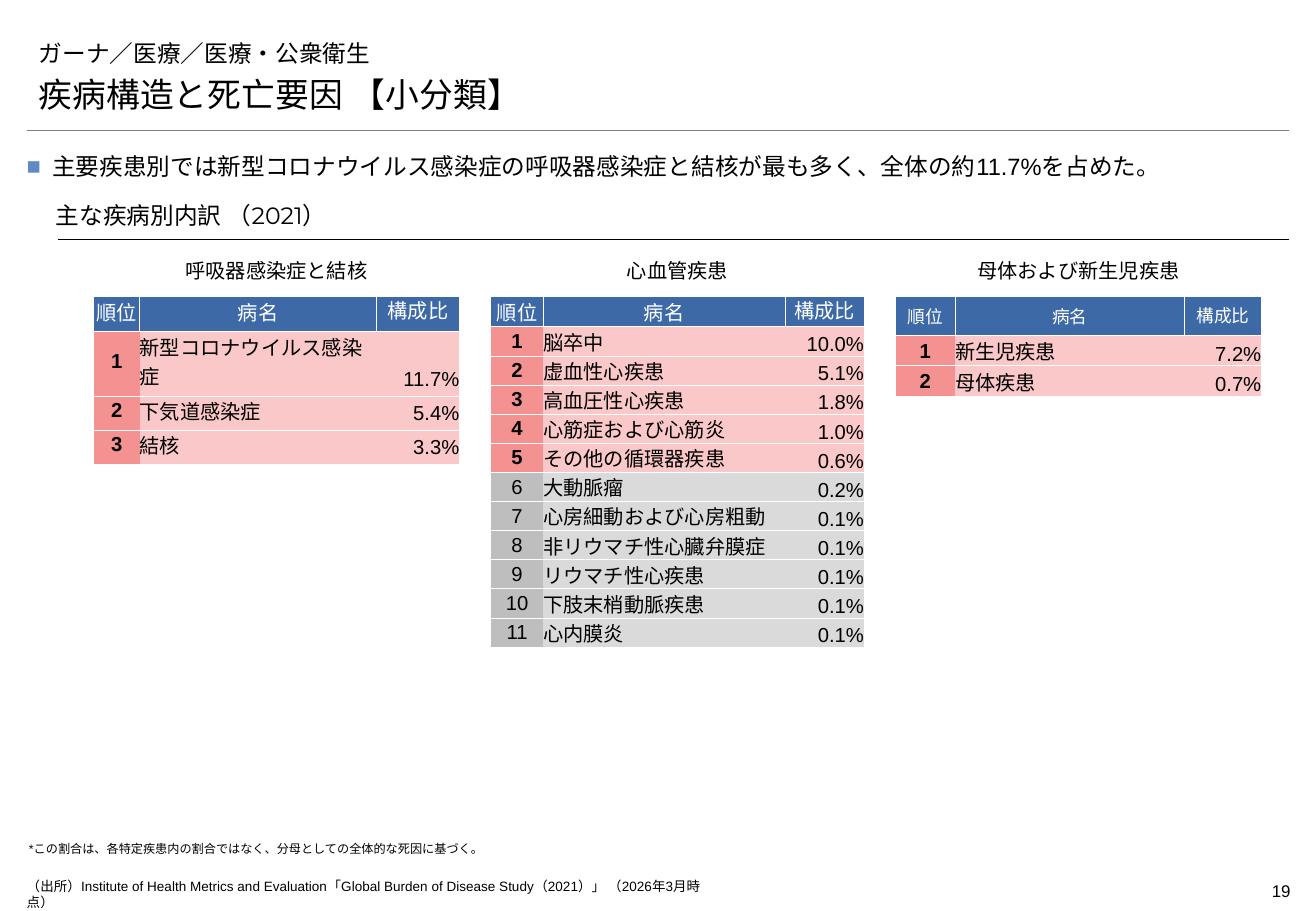
from lxml.etree import SubElement
from pptx import Presentation
from pptx.dml.color import RGBColor
from pptx.enum.text import MSO_ANCHOR, PP_ALIGN
from pptx.oxml.ns import qn
from pptx.util import Inches, Pt

BLACK = RGBColor(0x00, 0x00, 0x00)
WHITE = RGBColor(0xFF, 0xFF, 0xFF)
RULE_GREY = RGBColor(0x7F, 0x7F, 0x7F)
HEADER_BLUE = RGBColor(0x3D, 0x6A, 0xA7)
BULLET_BLUE = RGBColor(0x5F, 0x8A, 0xC3)
RED, PALE_RED = RGBColor(0xF4, 0x92, 0x92), RGBColor(0xFA, 0xC8, 0xC8)
GREY, PALE_GREY = RGBColor(0xBE, 0xBE, 0xBE), RGBColor(0xDA, 0xDA, 0xDA)

JAPANESE, LATIN, HEADING = "Noto Sans CJK JP", "Arial", "Montserrat"

SLIDE_WIDTH, SLIDE_HEIGHT = 10.83, 7.5
LEFT, RIGHT = 0.22, 10.61
CONTENT_WIDTH = RIGHT - LEFT
SECTION_LEFT = 0.46
CAPTION_TOP, TABLE_TOP = 2.14, 2.44
HIGHLIGHTED_RANKS = 5

BREADCRUMB = "ガーナ／医療／医療・公衆衛生"
TITLE = "疾病構造と死亡要因 【小分類】"
SECTION = "主な疾病別内訳 （2021）"
KEY_MESSAGE = [
    ("主要疾患別では新型コロナウイルス感染症の呼吸器感染症と結核が最も多く、全体の約", JAPANESE),
    ("11.7%", LATIN),
    ("を占めた。", JAPANESE),
]
FOOTNOTE = "*この割合は、各特定疾患内の割合ではなく、分母としての全体的な死因に基づく。"
SOURCE = ("（出所）Institute of Health Metrics and Evaluation"
          "「Global Burden of Disease Study（2021）」 （2026年3月時点）")
PAGE_NUMBER = "19"

COLUMN_NAMES = ("順位", "病名", "構成比")
HEADER_FONTS = (JAPANESE, JAPANESE, HEADING)
BODY_FONTS = (LATIN, JAPANESE, LATIN)
BODY_ALIGNMENTS = (PP_ALIGN.CENTER, PP_ALIGN.LEFT, PP_ALIGN.RIGHT)

# Insets are (top, bottom); heights run from the header row down.
DISEASE_TABLES = [
    dict(caption="呼吸器感染症と結核", left=0.77, columns=(0.38, 1.95, 0.68),
         heights=[0.29, 0.53, 0.28, 0.28], header_size=12, header_insets=(0, 0.04),
         body_insets=(0, 0.04), name_anchor=MSO_ANCHOR.MIDDLE,
         diseases=[("新型コロナウイルス感染症", "11.7%"), ("下気道感染症", "5.4%"),
                   ("結核", "3.3%")]),
    dict(caption="心血管疾患", left=4.04, columns=(0.43, 1.99, 0.65),
         heights=[0.25] + [0.24] * 11, header_size=12, header_insets=(0, 0),
         body_insets=(0, 0), name_anchor=MSO_ANCHOR.BOTTOM,
         diseases=[("脳卒中", "10.0%"), ("虚血性心疾患", "5.1%"),
                   ("高血圧性心疾患", "1.8%"), ("心筋症および心筋炎", "1.0%"),
                   ("その他の循環器疾患", "0.6%"), ("大動脈瘤", "0.2%"),
                   ("心房細動および心房粗動", "0.1%"),
                   ("非リウマチ性心臓弁膜症", "0.1%"), ("リウマチ性心疾患", "0.1%"),
                   ("下肢末梢動脈疾患", "0.1%"), ("心内膜炎", "0.1%")]),
    dict(caption="母体および新生児疾患", left=7.37, columns=(0.49, 1.89, 0.63),
         heights=[0.32, 0.25, 0.25], header_size=10.5, header_insets=(0.05, 0.05),
         body_insets=(0.01, 0), name_anchor=MSO_ANCHOR.BOTTOM,
         diseases=[("新生児疾患", "7.2%"), ("母体疾患", "0.7%")]),
]
NO_STYLE_NO_GRID = "{2D5ABB26-0587-4C30-8999-92F81FD0307C}"


def set_font(font, size, name, color=BLACK, bold=False):
    """Set the Latin face of a font and the face for its Japanese letters."""
    font.size, font.name, font.bold = Pt(size), name, bold
    font.color.rgb = color
    latin = font._element.find(qn("a:latin"))
    typeface = HEADING if name == HEADING else JAPANESE
    latin.addnext(latin.makeelement(qn("a:ea"), {"typeface": typeface}))


def set_margins(target, left, top, right, bottom):
    target.margin_left, target.margin_top = Inches(left), Inches(top)
    target.margin_right, target.margin_bottom = Inches(right), Inches(bottom)


def hang_indent(paragraph, length):
    properties = paragraph._p.get_or_add_pPr()
    properties.set("marL", str(Inches(length)))
    properties.set("indent", str(-Inches(length)))
    return properties


def add_text_frame(slide, box, insets, anchor=MSO_ANCHOR.TOP):
    frame = slide.shapes.add_textbox(*map(Inches, box)).text_frame
    frame.word_wrap = True
    frame.vertical_anchor = anchor
    set_margins(frame, *insets)
    return frame


def add_text(slide, box, text, size, name, insets=(0, 0.05, 0, 0.05),
             anchor=MSO_ANCHOR.TOP, alignment=PP_ALIGN.LEFT, hanging=0):
    paragraph = add_text_frame(slide, box, insets, anchor).paragraphs[0]
    paragraph.alignment = alignment
    if hanging:
        hang_indent(paragraph, hanging)
    paragraph.text = text
    set_font(paragraph.font, size, name)


def add_rule(slide, left, top, color, width):
    rule = slide.shapes.add_connector(1, Inches(left), Inches(top), Inches(RIGHT), Inches(top))
    rule.line.color.rgb = color
    rule.line.width = Pt(width)
    SubElement(rule._element.spPr, qn("a:effectLst"))


def add_key_message(slide):
    frame = add_text_frame(slide, (LEFT, 1.23, CONTENT_WIDTH, 0.24), (0, 0, 0, 0))
    paragraph = frame.paragraphs[0]
    paragraph.alignment = PP_ALIGN.JUSTIFY
    paragraph.line_spacing = 1.1
    paragraph.space_after = Pt(2)
    properties = hang_indent(paragraph, 0.21)
    bullet_color = SubElement(properties, qn("a:buClr"))
    SubElement(bullet_color, qn("a:srgbClr"), val=str(BULLET_BLUE))
    SubElement(properties, qn("a:buFont"), typeface=LATIN)
    SubElement(properties, qn("a:buChar"), char="■")
    for text, name in KEY_MESSAGE:
        run = paragraph.add_run()
        run.text = text
        set_font(run.font, 14, name)


def fill_cell(cell, text, size, name, fill, insets, anchor, alignment,
              color=BLACK, bold=False, borders=("lnT", "lnB")):
    top, bottom = insets
    set_margins(cell, 0, top, 0, bottom)
    cell.vertical_anchor = anchor
    for side in borders:
        border = SubElement(cell._tc.get_or_add_tcPr(), qn("a:" + side), w=str(Pt(0.5)))
        border_fill = SubElement(border, qn("a:solidFill"))
        SubElement(border_fill, qn("a:srgbClr"), val=str(WHITE))
    cell.fill.solid()
    cell.fill.fore_color.rgb = fill
    paragraph = cell.text_frame.paragraphs[0]
    paragraph.text = text
    paragraph.alignment = alignment
    set_font(paragraph.font, size, name, color, bold)


def add_disease_table(slide, caption, left, columns, heights, header_size,
                      header_insets, body_insets, name_anchor, diseases):
    width = sum(columns)
    add_text(slide, (left, CAPTION_TOP, width, 0.2), caption, 12, HEADING,
             (0, 0.05, 0, 0.08), MSO_ANCHOR.MIDDLE, PP_ALIGN.CENTER)
    box = (left, TABLE_TOP, width, sum(heights))
    table = slide.shapes.add_table(len(heights), len(columns), *map(Inches, box)).table
    table.first_row = table.horz_banding = False
    table._tbl.tblPr.find(qn("a:tableStyleId")).text = NO_STYLE_NO_GRID
    for column, column_width in zip(table.columns, columns):
        column.width = Inches(column_width)
    for row, row_height in zip(table.rows, heights):
        row.height = Inches(row_height)

    for column, (text, name) in enumerate(zip(COLUMN_NAMES, HEADER_FONTS)):
        sides = ["lnL"] * (column > 0) + ["lnR"] * (column < len(columns) - 1)
        fill_cell(table.cell(0, column), text, header_size, name, HEADER_BLUE,
                  header_insets, MSO_ANCHOR.MIDDLE, PP_ALIGN.CENTER, WHITE,
                  borders=sides + ["lnT", "lnB"])

    anchors = (MSO_ANCHOR.MIDDLE, name_anchor, MSO_ANCHOR.BOTTOM)
    for rank, (disease, share) in enumerate(diseases, 1):
        highlighted = rank <= HIGHLIGHTED_RANKS
        rank_fill, fill = (RED, PALE_RED) if highlighted else (GREY, PALE_GREY)
        for column, text in enumerate((str(rank), disease, share)):
            is_rank = column == 0
            fill_cell(table.cell(rank, column), text, 12, BODY_FONTS[column],
                      rank_fill if is_rank else fill, body_insets,
                      anchors[column], BODY_ALIGNMENTS[column],
                      bold=is_rank and highlighted)


def main():
    presentation = Presentation()
    presentation.slide_width = Inches(SLIDE_WIDTH)
    presentation.slide_height = Inches(SLIDE_HEIGHT)
    slide = presentation.slides.add_slide(presentation.slide_layouts[6])

    title_insets = (0.1, 0.05, 0.1, 0.05)
    add_text(slide, (LEFT, 0.21, CONTENT_WIDTH, 0.39), BREADCRUMB, 14, HEADING,
             title_insets, MSO_ANCHOR.BOTTOM)
    add_text(slide, (LEFT, 0.6, CONTENT_WIDTH, 0.39), TITLE, 20, HEADING,
             title_insets, MSO_ANCHOR.BOTTOM)
    add_rule(slide, LEFT, 1.07, RULE_GREY, 0.25)
    add_key_message(slide)
    add_text(slide, (SECTION_LEFT, 1.66, RIGHT - SECTION_LEFT, 0.31), SECTION, 14,
             HEADING, (0, 0.05, 0, 0.08), MSO_ANCHOR.BOTTOM)
    add_rule(slide, 0.48, 1.97, BLACK, 0.75)
    for disease_table in DISEASE_TABLES:
        add_disease_table(slide, **disease_table)
    add_text(slide, (0.14, 6.88, 4.71, 0.22), FOOTNOTE, 7.2, LATIN, title_insets, hanging=0.1)
    add_text(slide, (LEFT, 7.23, 5.58, 0.16), SOURCE, 8, LATIN, (0, 0, 0, 0))
    add_text(slide, (9.83, 7.2, 0.79, 0.27), PAGE_NUMBER, 10, LATIN, alignment=PP_ALIGN.RIGHT)
    presentation.save("out.pptx")


if __name__ == "__main__":
    main()
